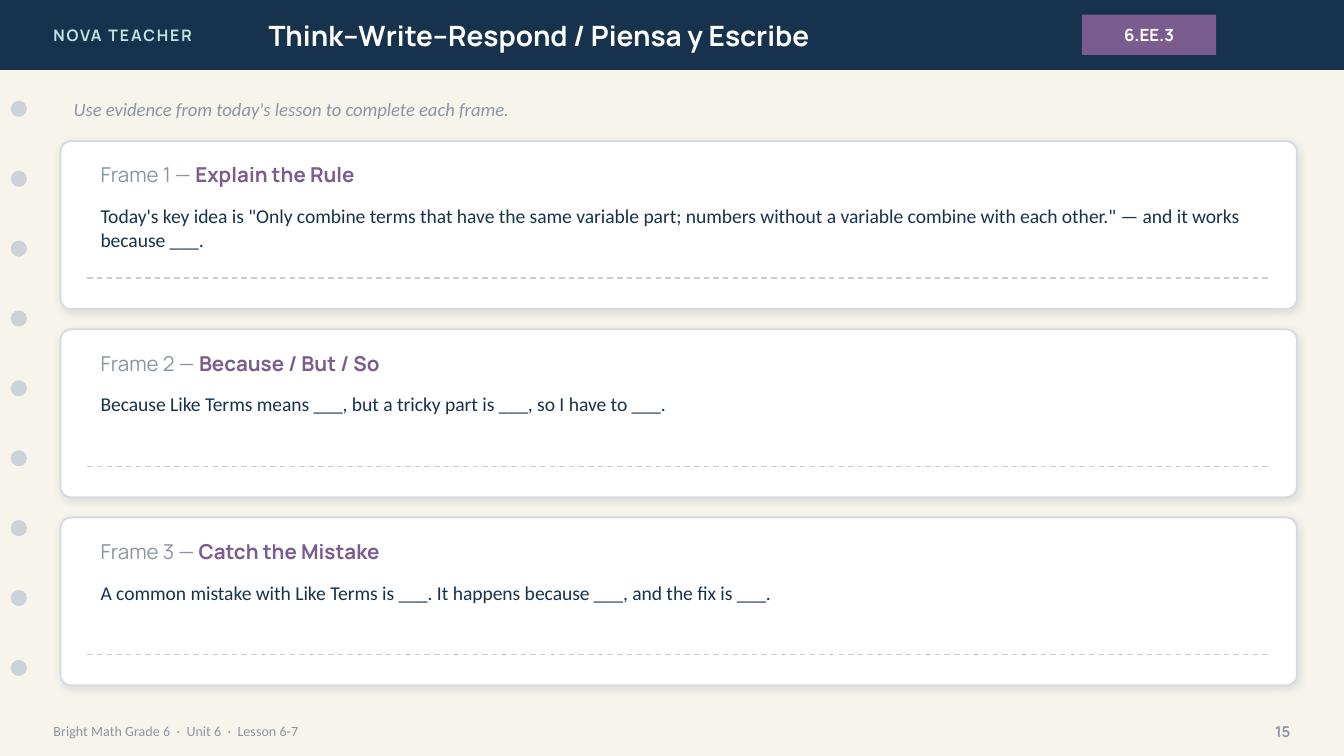
"""Build the Think-Write-Respond slide with three sentence frames."""
from dataclasses import dataclass

from lxml import etree
from pptx import Presentation
from pptx.dml.color import RGBColor
from pptx.enum.dml import MSO_LINE
from pptx.enum.shapes import MSO_CONNECTOR, MSO_SHAPE
from pptx.enum.text import MSO_ANCHOR, PP_ALIGN
from pptx.oxml.ns import qn
from pptx.util import Emu, Pt

RECTANGLE = MSO_SHAPE.RECTANGLE
ROUNDED = MSO_SHAPE.ROUNDED_RECTANGLE
OVAL = MSO_SHAPE.OVAL
STRAIGHT = MSO_CONNECTOR.STRAIGHT
DASH = MSO_LINE.DASH
TOP, MIDDLE = MSO_ANCHOR.TOP, MSO_ANCHOR.MIDDLE
LEFT, CENTER, RIGHT = PP_ALIGN.LEFT, PP_ALIGN.CENTER, PP_ALIGN.RIGHT
EMU_PER_PX = 4572
SLIDE_WIDTH, SLIDE_HEIGHT = 2000, 1125
BLANK_LAYOUT = 6


@dataclass(frozen=True)
class Theme:
    paper: str = "F7F4EC"
    navy: str = "17324D"
    mint: str = "BFE6E2"
    white: str = "FFFFFF"
    purple: str = "7A5C8E"
    hole: str = "CBD3D9"
    muted: str = "8A96A3"
    border: str = "D6DBDF"
    rule: str = "C7CDD2"
    shadow: str = "1C2E42"
    heading_font: str = "Manrope"
    body_font: str = "Calibri"
    brand_size: float = 8.5
    title_size: float = 15
    badge_size: float = 9
    footer_size: float = 7.5
    page_size: float = 8
    hint_size: float = 10
    label_size: float = 11
    prompt_size: float = 10.5


@dataclass(frozen=True)
class Box:
    left: int
    top: int
    width: int
    height: int

    def emu(self) -> tuple:
        return tuple(px(value) for value in (self.left, self.top, self.width, self.height))


@dataclass(frozen=True)
class Style:
    font: str
    size: float
    color: str
    bold: bool = False
    italic: bool = False
    align: PP_ALIGN = LEFT
    anchor: MSO_ANCHOR = MIDDLE
    spacing: int = 0


@dataclass(frozen=True)
class Label:
    box: Box
    text: str
    style: Style


@dataclass(frozen=True)
class Frame:
    name: str
    prompt: str


THEME = Theme()
HEADING, BODY = THEME.heading_font, THEME.body_font
BADGE_STYLE = Style(HEADING, THEME.badge_size, THEME.white, bold=True, align=CENTER)
LABEL_STYLE = Style(HEADING, THEME.label_size, THEME.muted)
PROMPT_STYLE = Style(BODY, THEME.prompt_size, THEME.navy, anchor=TOP)
LABELS = [
    Label(Box(60, 0, 480, 104), "NOVA TEACHER",
          Style(HEADING, THEME.brand_size, THEME.mint, bold=True, spacing=100)),
    Label(Box(380, 0, 1120, 104), "Think–Write–Respond / Piensa y Escribe",
          Style(HEADING, THEME.title_size, THEME.white, bold=True)),
    Label(Box(60, 1060, 1400, 56), "Bright Math Grade 6  ·  Unit 6  ·  Lesson 6-7",
          Style(BODY, THEME.footer_size, THEME.muted)),
    Label(Box(1840, 1060, 100, 56), "15",
          Style(HEADING, THEME.page_size, THEME.muted, bold=True, align=RIGHT)),
    Label(Box(90, 132, 1840, 60), "Use evidence from today's lesson to complete each frame.",
          Style(BODY, THEME.hint_size, THEME.muted, italic=True)),
]
FRAMES = [
    Frame("Explain the Rule",
          "Today's key idea is \"Only combine terms that have the same variable part; "
          "numbers without a variable combine with each other.\" — and it works because ___."),
    Frame("Because / But / So",
          "Because Like Terms means ___, but a tricky part is ___, so I have to ___."),
    Frame("Catch the Mistake",
          "A common mistake with Like Terms is ___. It happens because ___, and the fix is ___."),
]
HOLE_COUNT, HOLE_TOP, HOLE_PITCH = 9, 150, 104
FRAME_TOP, FRAME_PITCH = 210, 280


def px(value: int) -> Emu:
    return Emu(value * EMU_PER_PX)


def rgb(color: str) -> RGBColor:
    return RGBColor.from_string(color)


def add_panel(slide, kind: MSO_SHAPE, box: Box, fill: str):
    shape = slide.shapes.add_shape(kind, *box.emu())
    shape.shadow.inherit = False
    shape.fill.solid()
    shape.fill.fore_color.rgb = rgb(fill)
    shape.line.fill.background()
    return shape


def write(shape, text: str, style: Style):
    frame = shape.text_frame
    frame.word_wrap = True
    frame.vertical_anchor = style.anchor
    paragraph = frame.paragraphs[0]
    paragraph.alignment = style.align
    run = paragraph.add_run()
    run.text = text
    font = paragraph.font
    font.name, font.size = style.font, Pt(style.size)
    font.bold, font.italic = style.bold, style.italic
    font.color.rgb = rgb(style.color)
    if style.spacing:
        run._r.get_or_add_rPr().set("spc", str(style.spacing))
    return paragraph


def add_label(slide, label: Label):
    return write(slide.shapes.add_textbox(*label.box.emu()), label.text, label.style)


def add_soft_shadow(shape) -> None:
    effects = shape.element.spPr.find(qn("a:effectLst"))
    shadow = etree.SubElement(effects, qn("a:outerShdw"), blurRad=str(Pt(4)),
                              dist=str(Pt(1)), dir="5400000", algn="bl", rotWithShape="0")
    color = etree.SubElement(shadow, qn("a:srgbClr"), val=THEME.shadow)
    etree.SubElement(color, qn("a:alpha"), val="10000")


def add_writing_line(slide, left: int, right: int, top: int) -> None:
    line = slide.shapes.add_connector(STRAIGHT, px(left), px(top), px(right), px(top))
    line.line.color.rgb = rgb(THEME.rule)
    line.line.width = Pt(0.75)
    line.line.dash_style = DASH
    etree.SubElement(line.element.spPr, qn("a:effectLst"))


def add_frame(slide, number: int, frame: Frame) -> None:
    top = FRAME_TOP + (number - 1) * FRAME_PITCH
    card = add_panel(slide, ROUNDED, Box(90, top, 1840, 250), THEME.white)
    card.adjustments[0] = 0.064
    card.line.color.rgb = rgb(THEME.border)
    card.line.width = Pt(1)
    add_soft_shadow(card)
    label_box = Box(130, top + 20, 1760, 60)
    heading = add_label(slide, Label(label_box, f"Frame {number} — ", LABEL_STYLE))
    name = heading.add_run()
    name.text = frame.name
    name.font.bold = True
    name.font.color.rgb = rgb(THEME.purple)
    add_label(slide, Label(Box(130, top + 84, 1760, 80), frame.prompt, PROMPT_STYLE))
    add_writing_line(slide, 130, 1890, top + 204)


def main() -> None:
    presentation = Presentation()
    presentation.slide_width, presentation.slide_height = px(SLIDE_WIDTH), px(SLIDE_HEIGHT)
    slide = presentation.slides.add_slide(presentation.slide_layouts[BLANK_LAYOUT])
    slide.background.fill.solid()
    slide.background.fill.fore_color.rgb = rgb(THEME.paper)
    add_panel(slide, RECTANGLE, Box(0, 0, SLIDE_WIDTH, 104), THEME.navy)
    badge = add_panel(slide, RECTANGLE, Box(1610, 22, 200, 60), THEME.purple)
    write(badge, "6.EE.3", BADGE_STYLE)
    for index in range(HOLE_COUNT):
        add_panel(slide, OVAL, Box(16, HOLE_TOP + index * HOLE_PITCH, 24, 24), THEME.hole)
    for label in LABELS:
        add_label(slide, label)
    for number, frame in enumerate(FRAMES, start=1):
        add_frame(slide, number, frame)
    presentation.save("out.pptx")


if __name__ == "__main__":
    main()
